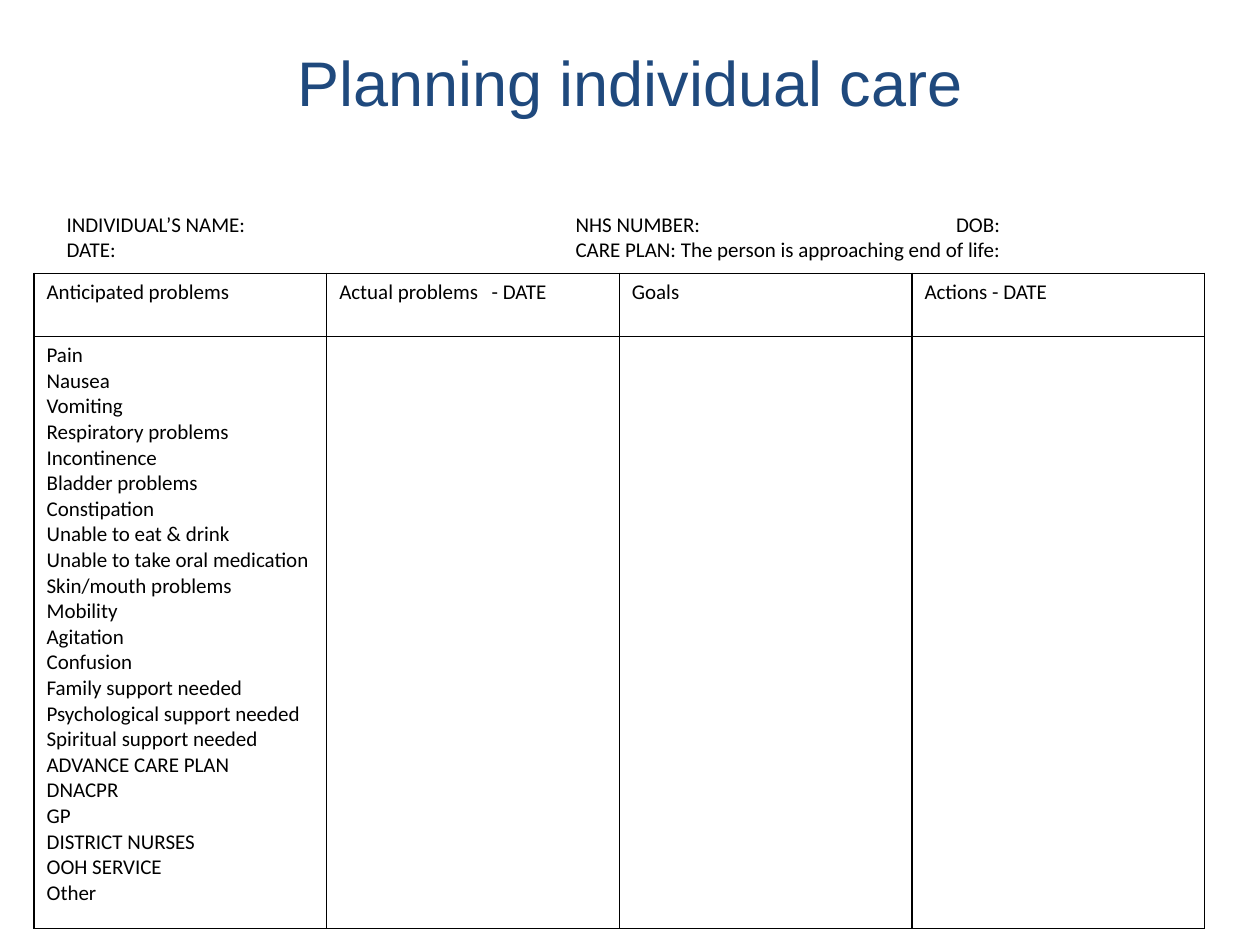
from lxml import etree
from pptx import Presentation
from pptx import util as u
from pptx.dml.color import RGBColor
from pptx.enum import text
from pptx.oxml import ns

NAVY = RGBColor(0x1F, 0x49, 0x7D)
BLACK = RGBColor(0, 0, 0)

TITLE = "Planning individual care"
DETAILS = [
    "INDIVIDUAL’S NAME:\tNHS NUMBER:\tDOB:",
    "DATE:\tCARE PLAN: The person is approaching end of life:",
]
DETAIL_TABS = [4.04, 7.06]
HEADINGS = ["Anticipated problems", "Actual problems\t- DATE", "Goals", "Actions - DATE"]
HEADING_TABS = [1.21]
PROBLEMS = [
    "Pain", "Nausea", "Vomiting", "Respiratory problems", "Incontinence",
    "Bladder problems", "Constipation", "Unable to eat & drink",
    "Unable to take oral medication", "Skin/mouth problems", "Mobility",
    "Agitation", "Confusion", "Family support needed",
    "Psychological support needed", "Spiritual support needed",
    "ADVANCE CARE PLAN", "DNACPR", "GP", "DISTRICT NURSES", "OOH SERVICE", "Other",
]
ROW_HEIGHTS = [0.5, 4.7]
TABLE_WIDTH = 9.29


def write(tf, lines, size=12, font="Calibri", color=BLACK, align=text.PP_ALIGN.LEFT, tabs=()):
    """Fill a text frame, one paragraph a line; tabs are stops in inches."""
    for i, line in enumerate(lines):
        p = tf.add_paragraph() if i else tf.paragraphs[0]
        p.alignment = align
        if tabs and "\t" in line:
            stops = etree.SubElement(p._p.get_or_add_pPr(), ns.qn("a:tabLst"))
            for pos in tabs:
                etree.SubElement(stops, ns.qn("a:tab"), pos=str(u.Inches(pos)), algn="l")
        r = p.add_run()
        r.text = line
        r.font.size, r.font.name = u.Pt(size), font
        r.font.color.rgb = color


def add_borders(cell):
    tcPr = cell._tc.get_or_add_tcPr()
    for side in "LRTB":
        ln = etree.SubElement(tcPr, ns.qn(f"a:ln{side}"), w=str(u.Pt(1)))
        fill = etree.SubElement(ln, ns.qn("a:solidFill"))
        etree.SubElement(fill, ns.qn("a:srgbClr"), val=str(BLACK))


prs = Presentation()
prs.slide_width, prs.slide_height = u.Inches(10), u.Inches(7.5)
s = prs.slides.add_slide(prs.slide_layouts[5])

title = s.shapes.title
title.left, title.top = u.Inches(0.5), u.Inches(0.3)
title.width, title.height = u.Inches(9), u.Inches(0.69)
title.text_frame.vertical_anchor = text.MSO_ANCHOR.MIDDLE
write(title.text_frame, [TITLE], size=36, font="Arial", color=NAVY, align=text.PP_ALIGN.CENTER)

details = s.shapes.add_textbox(u.Inches(0.43), u.Inches(1.63), u.Inches(9.14), u.Inches(0.5))
details.text_frame.word_wrap = True
write(details.text_frame, DETAILS, tabs=DETAIL_TABS)

rows = [[[h] for h in HEADINGS], [PROBLEMS] + [[]] * (len(HEADINGS) - 1)]
table = s.shapes.add_table(len(rows), len(HEADINGS), u.Inches(0.27), u.Inches(2.17),
                           u.Inches(TABLE_WIDTH), u.Inches(sum(ROW_HEIGHTS))).table
table.first_row = table.horz_banding = False
for row, height, contents in zip(table.rows, ROW_HEIGHTS, rows):
    row.height = u.Inches(height)
    for cell, lines in zip(row.cells, contents):
        add_borders(cell)
        cell.fill.background()
        write(cell.text_frame, lines, tabs=HEADING_TABS)

prs.save("out.pptx")
